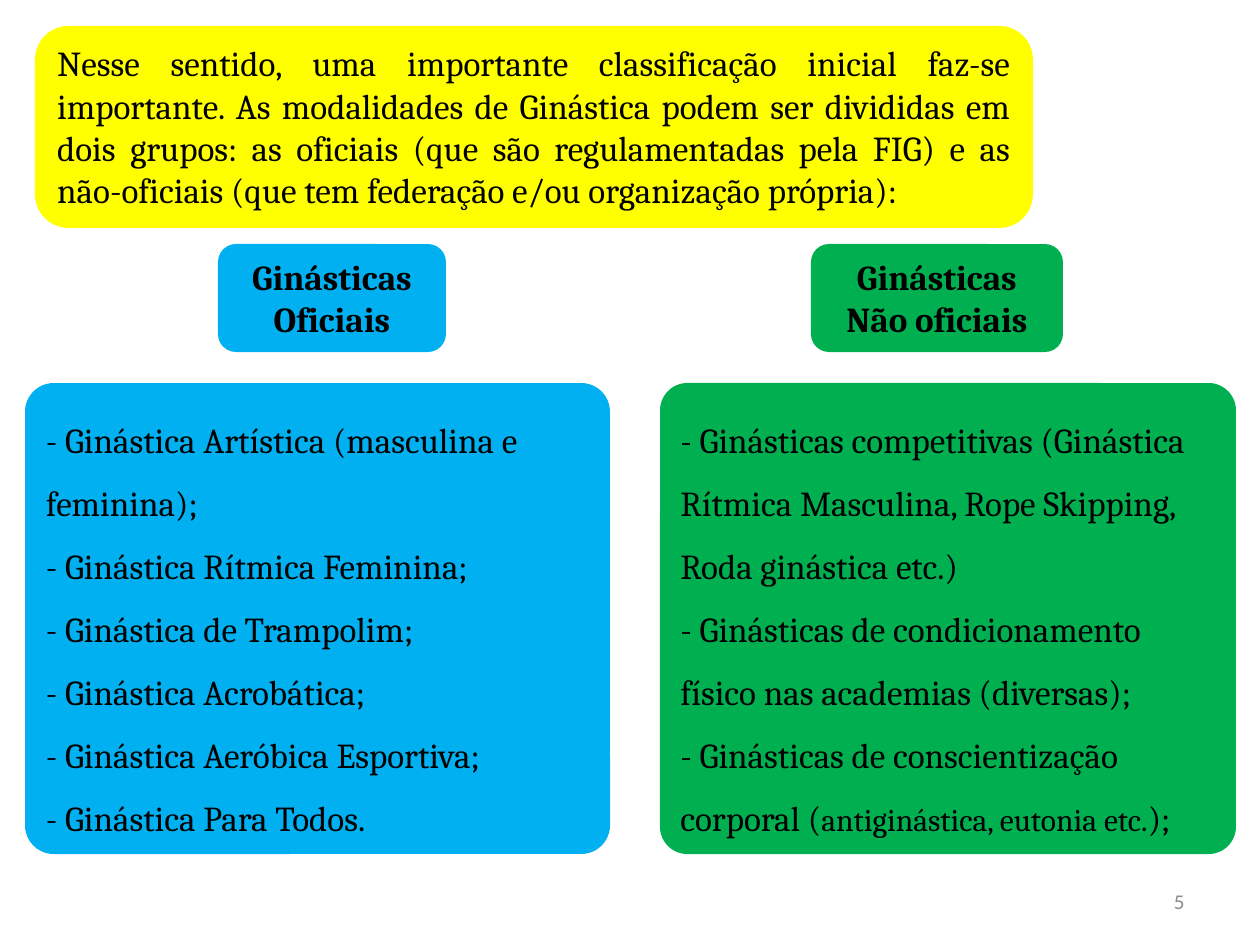
import pptx
import pptx.dml.color
import pptx.enum.shapes
import pptx.enum.text
import pptx.util

SCALE = 914400 / 126
ALIGN = pptx.enum.text.PP_ALIGN
ANCHOR = pptx.enum.text.MSO_ANCHOR
AUTO_SIZE = pptx.enum.text.MSO_AUTO_SIZE

YELLOW, BLUE, GREEN = "FFFF00", "00B0F0", "00B050"
BLACK, GRAY = "000000", "8C8C8C"
BODY = {"name": "Cambria", "size": pptx.util.Pt(20), "bold": False}
HEADING = {**BODY, "bold": True}
SMALL = {**BODY, "size": pptx.util.Pt(18)}
NUMBER = {"name": "Calibri", "size": pptx.util.Pt(12)}

INTRO_PARAGRAPH = {"alignment": ALIGN.JUSTIFY}
HEADING_PARAGRAPH = {"alignment": ALIGN.CENTER}
LIST_PARAGRAPH = {"alignment": ALIGN.LEFT, "line_spacing": 1.5}
NUMBER_PARAGRAPH = {"alignment": ALIGN.RIGHT}

HEADING_TOP, HEADING_HEIGHT = 244, 108
LIST_TOP, LIST_HEIGHT = 383, 471

INTRO = [
    "Nesse sentido, uma importante classificação inicial faz-se importante. "
    "As modalidades de Ginástica podem ser divididas em dois grupos: as oficiais "
    "(que são regulamentadas pela FIG) e as não-oficiais (que tem federação e/ou "
    "organização própria):"
]

GROUPS = [
    {
        "color": BLUE,
        "heading": ["Ginásticas", "Oficiais"],
        "heading_span": (218, 228),
        "list_span": (25, 585),
        "corner": 0.061,
        "items": [
            "- Ginástica Artística (masculina e feminina);",
            "- Ginástica Rítmica Feminina;",
            "- Ginástica de Trampolim;",
            "- Ginástica Acrobática;",
            "- Ginástica Aeróbica Esportiva;",
            "- Ginástica Para Todos.",
        ],
    },
    {
        "color": GREEN,
        "heading": ["Ginásticas", "Não oficiais"],
        "heading_span": (811, 252),
        "list_span": (660, 576),
        "corner": 0.058,
        "items": [
            "- Ginásticas competitivas (Ginástica Rítmica Masculina, Rope Skipping, "
            "Roda ginástica etc.)",
            "- Ginásticas de condicionamento físico nas academias (diversas);",
            [
                ("- Ginásticas de conscientização corporal (", BODY),
                ("antiginástica, eutonia etc.", SMALL),
                (");", BODY),
            ],
        ],
    },
]


def px(length):
    return pptx.util.Emu(round(length * SCALE))


def rgb(color):
    return pptx.dml.color.RGBColor.from_string(color)


def set_attributes(target, values):
    for name, value in values.items():
        setattr(target, name, value)


def write_text(shape, paragraphs, font, paragraph_format, color, frame_format):
    frame = shape.text_frame
    set_attributes(frame, {"word_wrap": True, **frame_format})
    for index, content in enumerate(paragraphs):
        paragraph = frame.add_paragraph() if index else frame.paragraphs[0]
        set_attributes(paragraph, paragraph_format)
        runs = [(content, font)] if isinstance(content, str) else content
        for text, run_font in runs:
            run = paragraph.add_run()
            run.text = text
            set_attributes(run.font, run_font)
            run.font.color.rgb = rgb(color)


def add_panel(slide, box, fill, paragraphs, font, paragraph_format, corner=None):
    shape = slide.shapes.add_shape(
        pptx.enum.shapes.MSO_SHAPE.ROUNDED_RECTANGLE, *map(px, box)
    )
    shape.shadow.inherit = False
    shape.fill.solid()
    shape.fill.fore_color.rgb = rgb(fill)
    shape.line.fill.background()
    if corner is not None:
        shape.adjustments[0] = corner
    frame_format = {
        "vertical_anchor": ANCHOR.TOP,
        "auto_size": AUTO_SIZE.SHAPE_TO_FIT_TEXT,
    }
    write_text(shape, paragraphs, font, paragraph_format, BLACK, frame_format)


def main():
    presentation = pptx.Presentation()
    presentation.slide_width = px(1260)
    presentation.slide_height = px(945)
    slide = presentation.slides.add_slide(presentation.slide_layouts[6])

    number = slide.shapes.add_textbox(*map(px, (903, 876, 294, 50)))
    write_text(number, ["5"], NUMBER, NUMBER_PARAGRAPH, GRAY,
               {"vertical_anchor": ANCHOR.MIDDLE})

    add_panel(slide, (35, 26, 998, 202), YELLOW, INTRO, BODY, INTRO_PARAGRAPH)
    for group in GROUPS:
        left, width = group["heading_span"]
        add_panel(slide, (left, HEADING_TOP, width, HEADING_HEIGHT), group["color"],
                  group["heading"], HEADING, HEADING_PARAGRAPH)
        left, width = group["list_span"]
        add_panel(slide, (left, LIST_TOP, width, LIST_HEIGHT), group["color"],
                  group["items"], BODY, LIST_PARAGRAPH, group["corner"])

    presentation.save("out.pptx")


if __name__ == "__main__":
    main()
